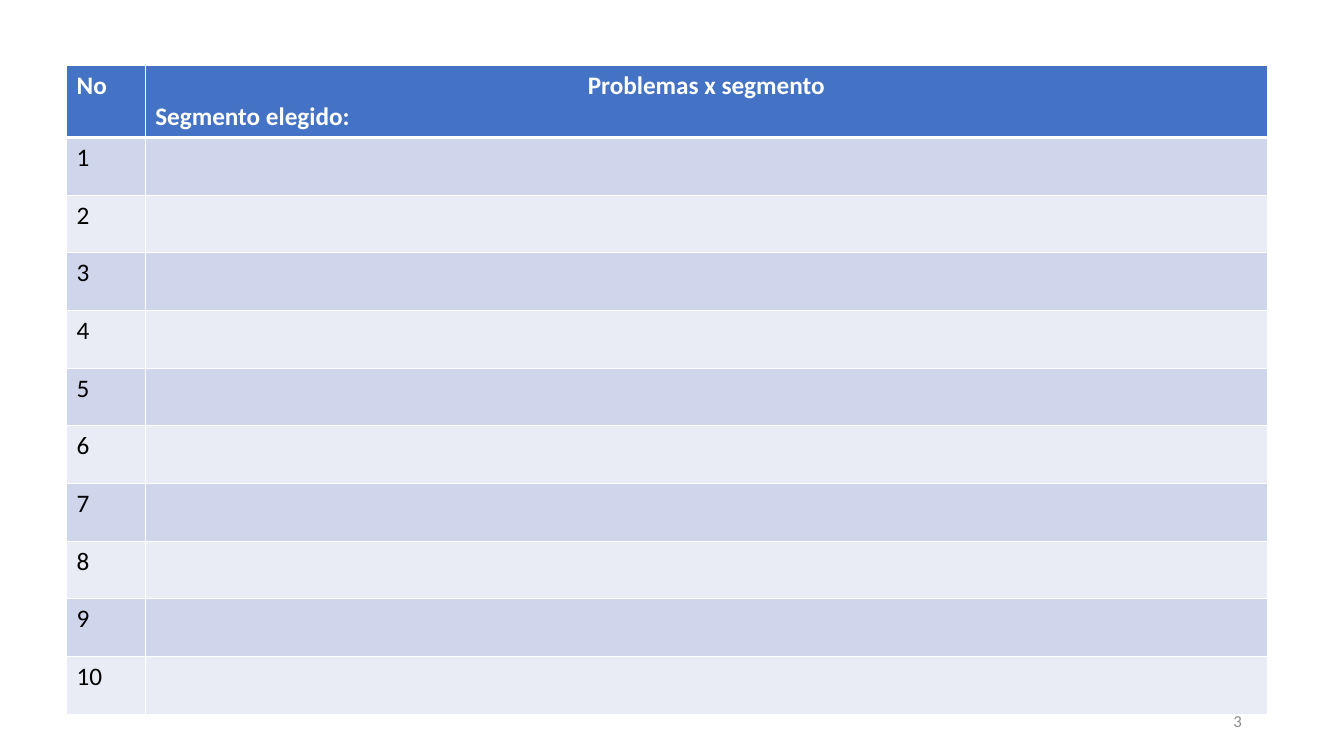
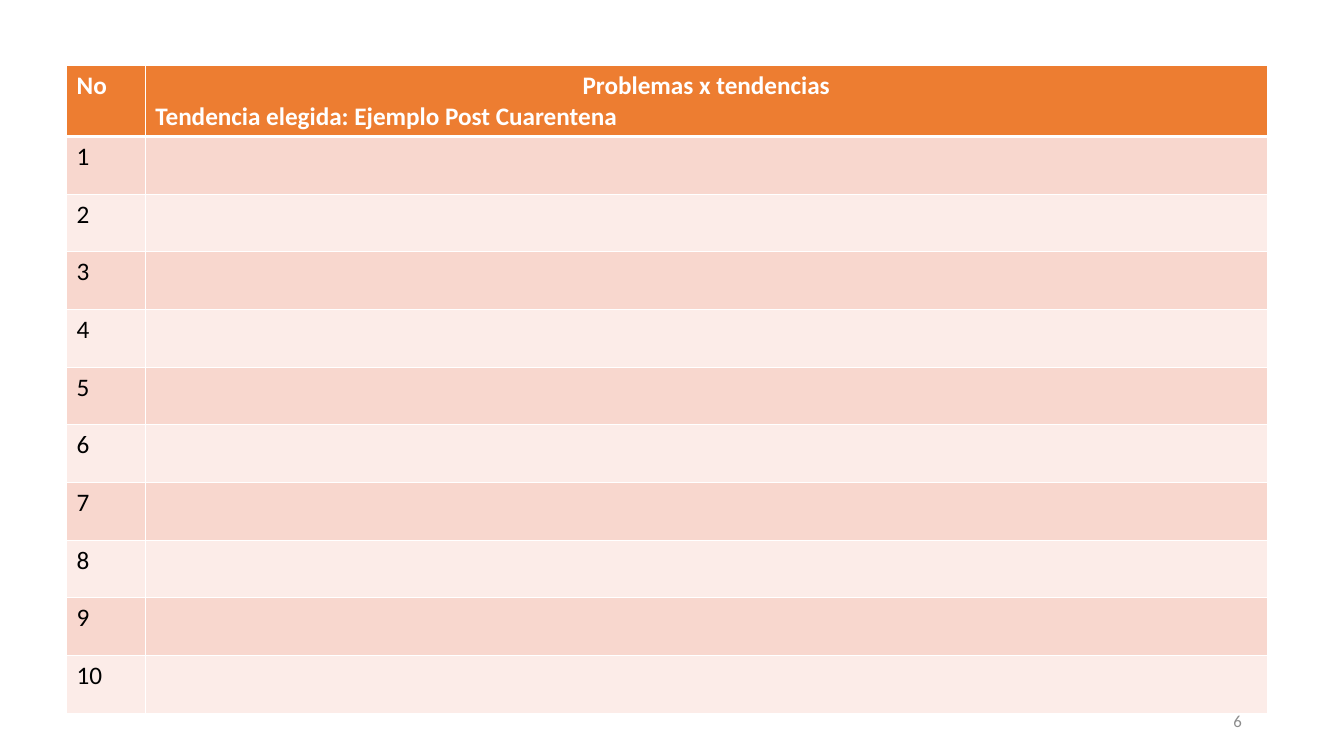
import pptx
import pptx.dml.color
import pptx.enum.text
import pptx.oxml
import pptx.oxml.ns
import pptx.util
from pptx.dml.color import RGBColor
from pptx.enum.text import MSO_ANCHOR, PP_ALIGN
from pptx.util import Cm, Pt

FONT = "Calibri"
WHITE = RGBColor(0xFF, 0xFF, 0xFF)
BLACK = RGBColor(0, 0, 0)
GREY = RGBColor(0x8C, 0x8C, 0x8C)
# Header, odd row and even row colours
BLUES = (RGBColor(0x44, 0x72, 0xC4), RGBColor(0xCF, 0xD5, 0xEA), RGBColor(0xE9, 0xEB, 0xF5))
ORANGES = (RGBColor(0xED, 0x7D, 0x31), RGBColor(0xF8, 0xD7, 0xCE), RGBColor(0xFC, 0xEC, 0xE8))

PROBLEM_COUNT = 10
NUMBER_WIDTH = Cm(1.98)
HEADER_HEIGHT = Cm(1.78)
TABLE_BOX = (Cm(1.68), Cm(1.66), Cm(30.26), Cm(16.31))
PAGE_NUMBER_BOX = (Cm(23.93), Cm(17.65), Cm(7.62), Cm(1.02))

SLIDES = [
    ("Problemas x segmento", "Segmento elegido:", BLUES, 3),
    ("Problemas x tendencias", "Tendencia elegida: Ejemplo Post Cuarentena", ORANGES, 6),
]


def format_text(text_frame, size, color, bold=False):
    for paragraph in text_frame.paragraphs:
        for run in paragraph.runs:
            run.font.name = FONT
            run.font.size = Pt(size)
            run.font.bold = bold
            run.font.color.rgb = color


def set_borders(cell, top=1, bottom=1):
    """Draw white cell borders, with widths in points."""
    properties = cell._tc.get_or_add_tcPr()
    for side, width in (("L", 1), ("R", 1), ("T", top), ("B", bottom)):
        properties.append(pptx.oxml.parse_xml(
            f'<a:ln{side} {pptx.oxml.ns.nsdecls("a")} w="{Pt(width)}">'
            f'<a:solidFill><a:srgbClr val="{WHITE}"/></a:solidFill></a:ln{side}>'))


def add_problem_table(slide, box, heading, choice, colors):
    left, top, width, height = box
    table = slide.shapes.add_table(PROBLEM_COUNT + 1, 2, left, top, width, height).table
    table.first_row = table.horz_banding = False
    table.columns[0].width = NUMBER_WIDTH
    table.columns[1].width = width - NUMBER_WIDTH
    header_color, odd_color, even_color = colors

    for index, row in enumerate(table.rows):
        is_header = index == 0
        if is_header:
            row.height = HEADER_HEIGHT
            fill_color = header_color
            texts = ("No", f"{heading}\n{choice}")
        else:
            row.height = (height - HEADER_HEIGHT) // PROBLEM_COUNT
            fill_color = odd_color if index % 2 else even_color
            texts = (str(index), "")
        for cell, text in zip(row.cells, texts):
            set_borders(cell, top=3 if index == 1 else 1, bottom=3 if is_header else 1)
            cell.fill.solid()
            cell.fill.fore_color.rgb = fill_color
            cell.text_frame.text = text
            format_text(cell.text_frame, 18, WHITE if is_header else BLACK, is_header)

    table.cell(0, 1).text_frame.paragraphs[0].alignment = PP_ALIGN.CENTER


def add_page_number(slide, box, number):
    text_frame = slide.shapes.add_textbox(*box).text_frame
    text_frame.word_wrap = True
    text_frame.vertical_anchor = MSO_ANCHOR.MIDDLE
    text_frame.text = str(number)
    text_frame.paragraphs[0].alignment = PP_ALIGN.RIGHT
    format_text(text_frame, 12, GREY)


def main():
    presentation = pptx.Presentation()
    presentation.slide_width = Cm(33.87)
    presentation.slide_height = Cm(19.05)
    for heading, choice, colors, number in SLIDES:
        slide = presentation.slides.add_slide(presentation.slide_layouts[6])
        add_problem_table(slide, TABLE_BOX, heading, choice, colors)
        add_page_number(slide, PAGE_NUMBER_BOX, number)
    presentation.save("out.pptx")


if __name__ == "__main__":
    main()
